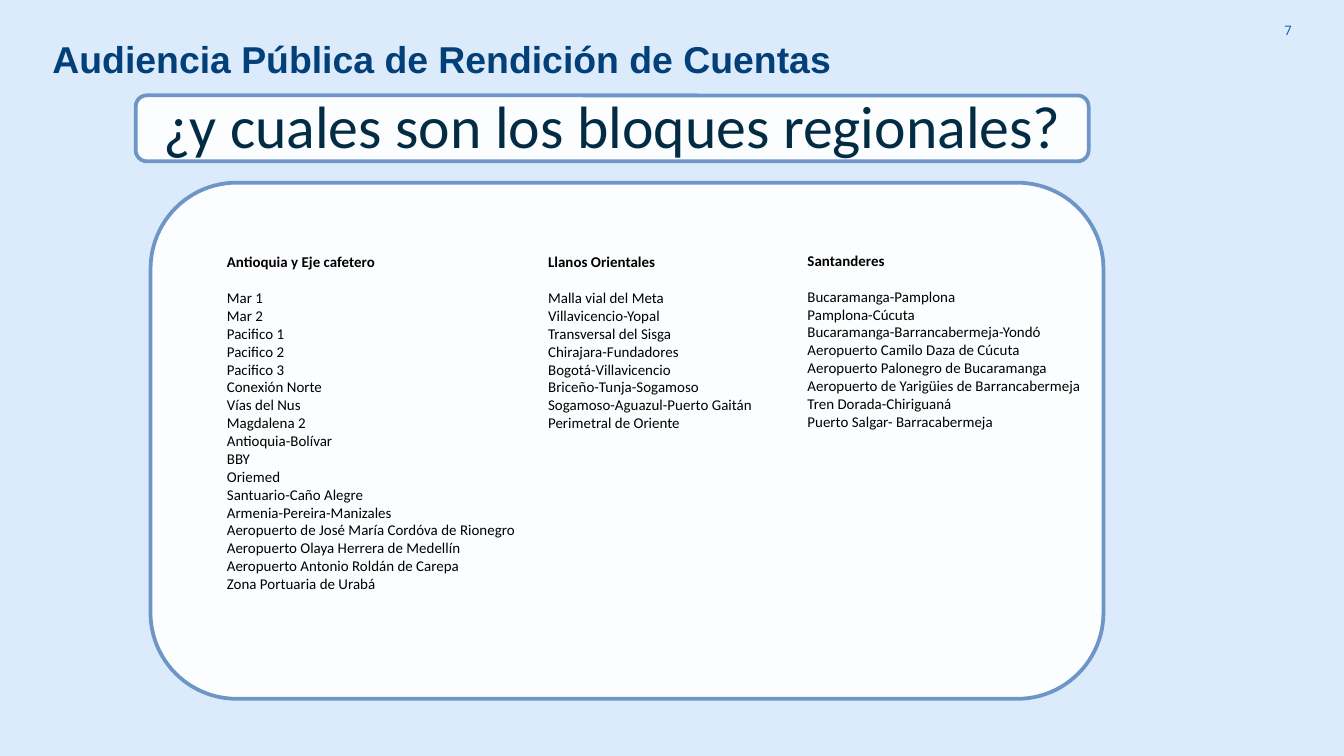
from pptx import Presentation
from pptx.dml.color import RGBColor
from pptx.enum import shapes, text
from pptx.oxml.ns import qn
from pptx.util import Inches, Pt
from lxml import etree

COLORS = {
    "background": "DCEBFB",
    "panel": "FFFFFF",
    "border": "6D96C7",
    "title": "033F78",
    "question": "022B44",
    "body": "000000",
    "number": "0054BC",
}

# Left, top, width, height, heading, projects
BLOCKS = [
    (5.91, 1.82, 2.3, 1.45, "Santanderes", [
        "Bucaramanga-Pamplona", "Pamplona-Cúcuta",
        "Bucaramanga-Barrancabermeja-Yondó", "Aeropuerto Camilo Daza de Cúcuta",
        "Aeropuerto Palonegro de Bucaramanga",
        "Aeropuerto de Yarigüies de Barrancabermeja",
        "Tren Dorada-Chiriguaná", "Puerto Salgar- Barracabermeja"]),
    (3.98, 1.83, 1.98, 1.59, "Llanos Orientales", [
        "Malla vial del Meta", "Villavicencio-Yopal", "Transversal del Sisga",
        "Chirajara-Fundadores", "Bogotá-Villavicencio", "Briceño-Tunja-Sogamoso",
        "Sogamoso-Aguazul-Puerto Gaitán", "Perimetral de Oriente"]),
    (1.59, 1.83, 2.66, 2.66, "Antioquia y Eje cafetero", [
        "Mar 1", "Mar 2", "Pacifico 1", "Pacifico 2", "Pacifico 3",
        "Conexión Norte", "Vías del Nus", "Magdalena 2", "Antioquia-Bolívar",
        "BBY", "Oriemed", "Santuario-Caño Alegre", "Armenia-Pereira-Manizales",
        "Aeropuerto de José María Cordóva de Rionegro",
        "Aeropuerto Olaya Herrera de Medellín",
        "Aeropuerto Antonio Roldán de Carepa", "Zona Portuaria de Urabá"]),
]


def style(paragraph, font_name, size, color, bold=False):
    for run in paragraph.runs:
        run.font.name = font_name
        run.font.size = Pt(size)
        run.font.bold = bold
        run.font.color.rgb = RGBColor.from_string(COLORS[color])


def add_panel(slide, left, top, width, height):
    """Add a rounded white panel, 90 % opaque, with a blue border."""
    panel = slide.shapes.add_shape(
        shapes.MSO_SHAPE.ROUNDED_RECTANGLE,
        Inches(left), Inches(top), Inches(width), Inches(height))
    panel.shadow.inherit = False
    panel.fill.solid()
    panel.fill.fore_color.rgb = RGBColor.from_string(COLORS["panel"])
    fill_color = panel.fill._xPr.find(qn("a:solidFill"))[0]
    etree.SubElement(fill_color, qn("a:alpha"), val="90000")
    panel.line.color.rgb = RGBColor.from_string(COLORS["border"])
    panel.line.width = Pt(2)
    return panel


presentation = Presentation()
presentation.slide_width = Inches(10)
presentation.slide_height = Inches(10 * 9 / 16)
slide = presentation.slides.add_slide(presentation.slide_layouts[5])
slide.background.fill.solid()
slide.background.fill.fore_color.rgb = RGBColor.from_string(COLORS["background"])

# Title
title = slide.shapes.title
title.left, title.top = Inches(0.29), Inches(0.22)
title.width, title.height = Inches(7.3), Inches(0.77)
title.text_frame.text = "Audiencia Pública de Rendición de Cuentas"
title.text_frame.vertical_anchor = text.MSO_ANCHOR.TOP
title.text_frame.auto_size = text.MSO_AUTO_SIZE.NONE
paragraph = title.text_frame.paragraphs[0]
paragraph.alignment = text.PP_ALIGN.LEFT
style(paragraph, "Arial", 20, "title", bold=True)

# Slide number
number = slide.shapes.add_textbox(Inches(9.11), Inches(0.01), Inches(0.6), Inches(0.43))
number.text_frame.text = "7"
number.text_frame.word_wrap = True
number.text_frame.vertical_anchor = text.MSO_ANCHOR.MIDDLE
paragraph = number.text_frame.paragraphs[0]
paragraph.alignment = text.PP_ALIGN.RIGHT
style(paragraph, "Open Sans", 7, "number")

# Question
add_panel(slide, 1.01, 0.71, 7.09, 0.49)
question = slide.shapes.add_textbox(Inches(1.07), Inches(0.74), Inches(6.98), Inches(0.44))
question.text_frame.text = "¿y cuales son los bloques regionales?"
question.text_frame.word_wrap = True
question.text_frame.vertical_anchor = text.MSO_ANCHOR.MIDDLE
paragraph = question.text_frame.paragraphs[0]
paragraph.alignment = text.PP_ALIGN.CENTER
paragraph.line_spacing = 0.9
style(paragraph, "Calibri", 32, "question")

# Regional blocks
add_panel(slide, 1.12, 1.36, 7.09, 3.84)
for left, top, width, height, heading, projects in BLOCKS:
    block = slide.shapes.add_textbox(
        Inches(left), Inches(top), Inches(width), Inches(height))
    block.text_frame.word_wrap = True
    block.text_frame.text = heading
    heading_paragraph = block.text_frame.paragraphs[0]
    heading_paragraph.space_after = Pt(9.75)
    style(heading_paragraph, "Calibri", 8, "body", bold=True)
    list_paragraph = block.text_frame.add_paragraph()
    list_paragraph.text = "\v".join(projects)
    style(list_paragraph, "Calibri", 8, "body")

presentation.save("out.pptx")
